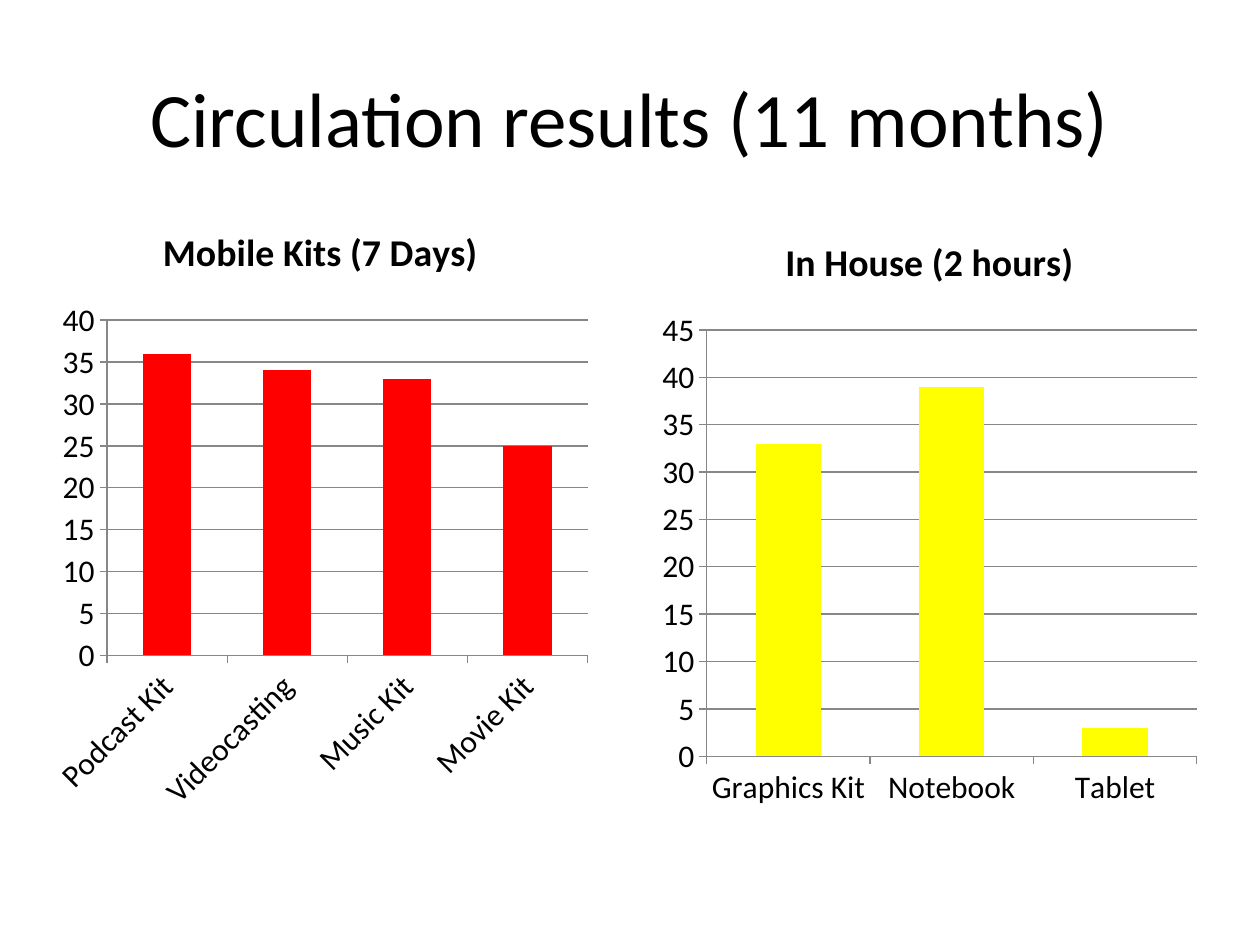
from pptx import Presentation
from pptx.chart.data import CategoryChartData
from pptx.dml.color import RGBColor
from pptx.enum.chart import XL_CHART_TYPE, XL_TICK_MARK
from pptx.enum.text import MSO_ANCHOR, PP_ALIGN
from pptx.util import Cm, Pt

FONT = "Calibri"
BLACK = "000000"
AXIS_GRAY = "878787"


def paint(color_format, color):
    color_format.rgb = RGBColor.from_string(color)


def format_font(font, size, bold=False, color=BLACK):
    font.name = FONT
    font.size = Pt(size)
    font.bold = bold
    paint(font.color, color)


def write_text(frame, text, size, bold=False, color=BLACK, align=PP_ALIGN.CENTER):
    para = frame.paragraphs[0]
    para.alignment = align
    span = para.add_run()
    span.text = text
    format_font(span.font, size, bold, color)


def add_heading(page, text, left, top, width, height):
    box = page.shapes.add_textbox(Cm(left), Cm(top), Cm(width), Cm(height))
    frame = box.text_frame
    frame.word_wrap = True
    frame.vertical_anchor = MSO_ANCHOR.MIDDLE
    write_text(frame, text, size=44)


def format_line(line):
    paint(line.color, AXIS_GRAY)
    line.width = Pt(0.75)


def add_circulation_chart(page, title, counts, color, maximum, left, top, width, height):
    data = CategoryChartData()
    data.categories = list(counts)
    data.add_series("Series 1", list(counts.values()))
    chart = page.shapes.add_chart(
        XL_CHART_TYPE.COLUMN_CLUSTERED, Cm(left), Cm(top), Cm(width), Cm(height), data
    ).chart
    format_font(chart.font, 18)
    chart.has_legend = False
    chart.has_title = True
    write_text(chart.chart_title.text_frame, title, size=21.6, bold=True)

    plot = chart.plots[0]
    plot.vary_by_categories = False
    plot.gap_width = 150
    fill = plot.series[0].format.fill
    fill.solid()
    paint(fill.fore_color, color)

    for axis in (chart.category_axis, chart.value_axis):
        axis.major_tick_mark = XL_TICK_MARK.OUTSIDE
        axis.minor_tick_mark = XL_TICK_MARK.NONE
        format_line(axis.format.line)
    scale = chart.value_axis
    scale.minimum_scale = 0
    scale.maximum_scale = maximum
    scale.major_unit = 5
    scale.has_major_gridlines = True
    format_line(scale.major_gridlines.format.line)


def main():
    deck = Presentation()
    deck.slide_width = Cm(25.4)
    deck.slide_height = Cm(19.05)
    page = deck.slides.add_slide(deck.slide_layouts[6])

    add_heading(page, "Circulation results (11 months)", 1.27, 0.76, 22.86, 3.18)
    add_circulation_chart(
        page, "In House (2 hours)",
        {"Graphics Kit": 33, "Notebook": 39, "Tablet": 3},
        "FFFF00", 45, 13.13, 4.23, 11.22, 12.28,
    )
    add_circulation_chart(
        page, "Mobile Kits (7 Days)",
        {"Podcast Kit": 36, "Videocasting": 34, "Music Kit": 33, "Movie Kit": 25},
        "FF0000", 40, 0.85, 4.02, 11.22, 12.57,
    )
    deck.save("out.pptx")


if __name__ == "__main__":
    main()
